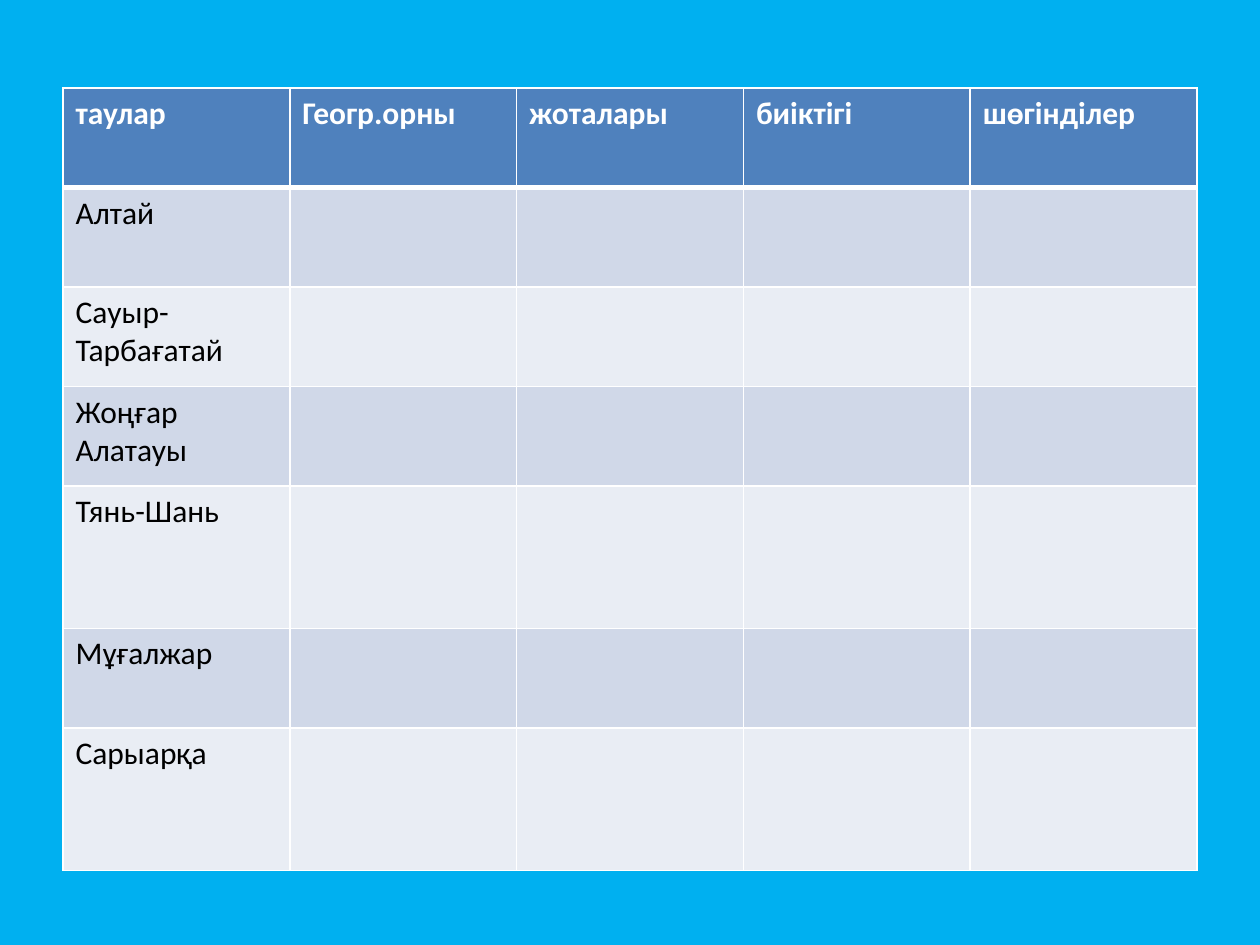
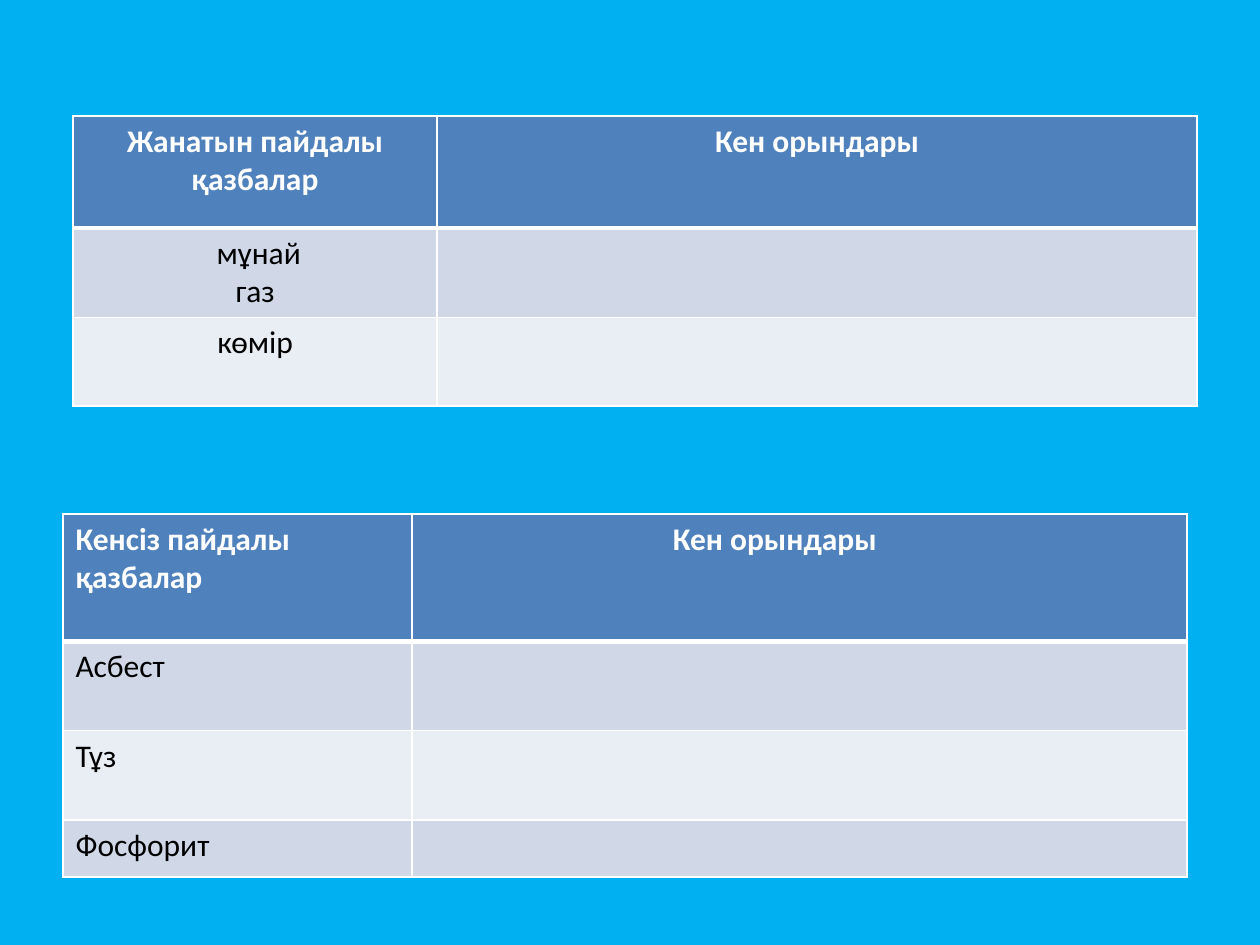
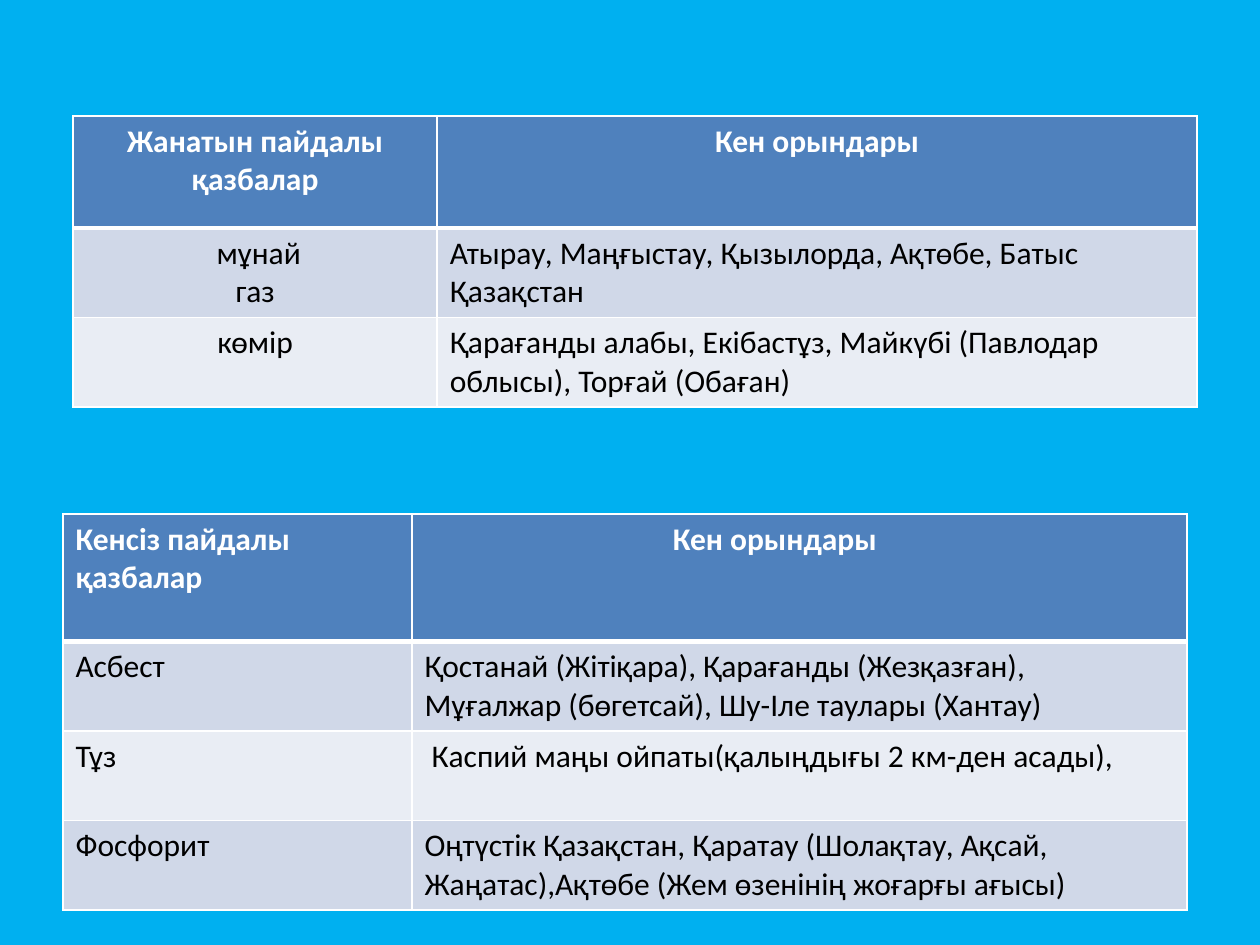
import pptx
import pptx.dml.color
import pptx.enum.text
import pptx.oxml
import pptx.oxml.ns
import pptx.util

PIXEL = pptx.util.Inches(1) // 100
BACKGROUND = "00B0F0"
HEADER_FILL = "4F81BD"
BAND_FILLS = ["E9EDF4", "D0D8E8"]
WHITE = "FFFFFF"
BLACK = "000000"
FONT = "Calibri"
CENTER = pptx.enum.text.PP_ALIGN.CENTER
LEFT = pptx.enum.text.PP_ALIGN.LEFT


def color(hex_string):
    return pptx.dml.color.RGBColor.from_string(hex_string)


def add_grid(slide, left, top, column_widths, row_heights, rows, centered=()):
    frame = slide.shapes.add_table(
        len(row_heights), len(column_widths), left * PIXEL, top * PIXEL,
        sum(column_widths) * PIXEL, sum(row_heights) * PIXEL)
    table = frame.table
    for column, width in zip(table.columns, column_widths):
        column.width = width * PIXEL
    for row_index, height in enumerate(row_heights):
        table.rows[row_index].height = height * PIXEL
        is_header = row_index == 0
        border_widths = {
            "lnL": 1,
            "lnR": 1,
            "lnT": 3 if row_index == 1 else 1,
            "lnB": 3 if is_header else 1,
        }
        for column_index in range(len(column_widths)):
            cell = table.cell(row_index, column_index)
            properties = cell._tc.get_or_add_tcPr()
            for side, points in border_widths.items():
                properties.append(pptx.oxml.parse_xml(
                    f'<a:{side} {pptx.oxml.ns.nsdecls("a")} w="{pptx.util.Pt(points)}">'
                    f'<a:solidFill><a:srgbClr val="{WHITE}"/></a:solidFill></a:{side}>'))
            cell.fill.solid()
            cell.fill.fore_color.rgb = color(HEADER_FILL if is_header else BAND_FILLS[row_index % 2])
            if column_index >= len(rows[row_index]):
                continue
            cell.text_frame.text = rows[row_index][column_index]
            for paragraph in cell.text_frame.paragraphs:
                is_centered = column_index in centered or (is_header and centered)
                paragraph.alignment = CENTER if is_centered else LEFT
                for run in paragraph.runs:
                    run.font.name = FONT
                    run.font.size = pptx.util.Pt(18)
                    run.font.bold = is_header
                    run.font.color.rgb = color(WHITE if is_header else BLACK)
    return table


presentation = pptx.Presentation()
presentation.slide_width = 1000 * PIXEL
presentation.slide_height = 750 * PIXEL
master_fill = presentation.slide_master.background.fill
master_fill.solid()
master_fill.fore_color.rgb = color(BACKGROUND)
blank_layout = presentation.slide_layouts[6]

mountain_headers = ["таулар", "Геогр.орны", "жоталары", "биіктігі", "шөгінділер"]
mountains = ["Алтай", "Сауыр-Тарбағатай", "Жоңғар Алатауы", "Тянь-Шань", "Мұғалжар", "Сарыарқа"]
slide = presentation.slides.add_slide(blank_layout)
add_grid(slide, 50, 70, [180] * 5, [79, 79, 79, 79, 113, 79, 113],
         [mountain_headers] + [[mountain] for mountain in mountains])

fuels = [" мұнай\nгаз", "көмір"]
fuel_deposits = [
    "Атырау, Маңғыстау, Қызылорда, Ақтөбе, Батыс Қазақстан",
    "Қарағанды алабы, Екібастұз, Майкүбі (Павлодар облысы), Торғай (Обаған)",
]
minerals = ["Асбест", "Тұз", "Фосфорит"]
mineral_deposits = [
    "Қостанай (Жітіқара), Қарағанды (Жезқазған),\nМұғалжар (бөгетсай), Шу-Іле таулары (Хантау)",
    " Каспий маңы ойпаты(қалыңдығы 2 км-ден асады),",
    "Оңтүстік Қазақстан, Қаратау (Шолақтау, Ақсай, Жаңатас),Ақтөбе (Жем өзенінің жоғарғы ағысы)",
]

for answers_shown in (False, True):
    slide = presentation.slides.add_slide(blank_layout)
    fuel_rows = [["Жанатын пайдалы қазбалар", "Кен орындары"]]
    mineral_rows = [["Кенсіз пайдалы қазбалар", "Кен орындары"]]
    for rows, names, deposits in ((fuel_rows, fuels, fuel_deposits),
                                  (mineral_rows, minerals, mineral_deposits)):
        for name, deposit in zip(names, deposits):
            rows.append([name, deposit] if answers_shown else [name])
    add_grid(slide, 58, 92, [289, 603], [89, 70, 70], fuel_rows, centered=(0,))
    mineral_table = add_grid(slide, 50, 408, [277, 615], [101, 71, 71, 45], mineral_rows)
    mineral_table.cell(0, 1).margin_left = 207 * PIXEL

presentation.save("out.pptx")
